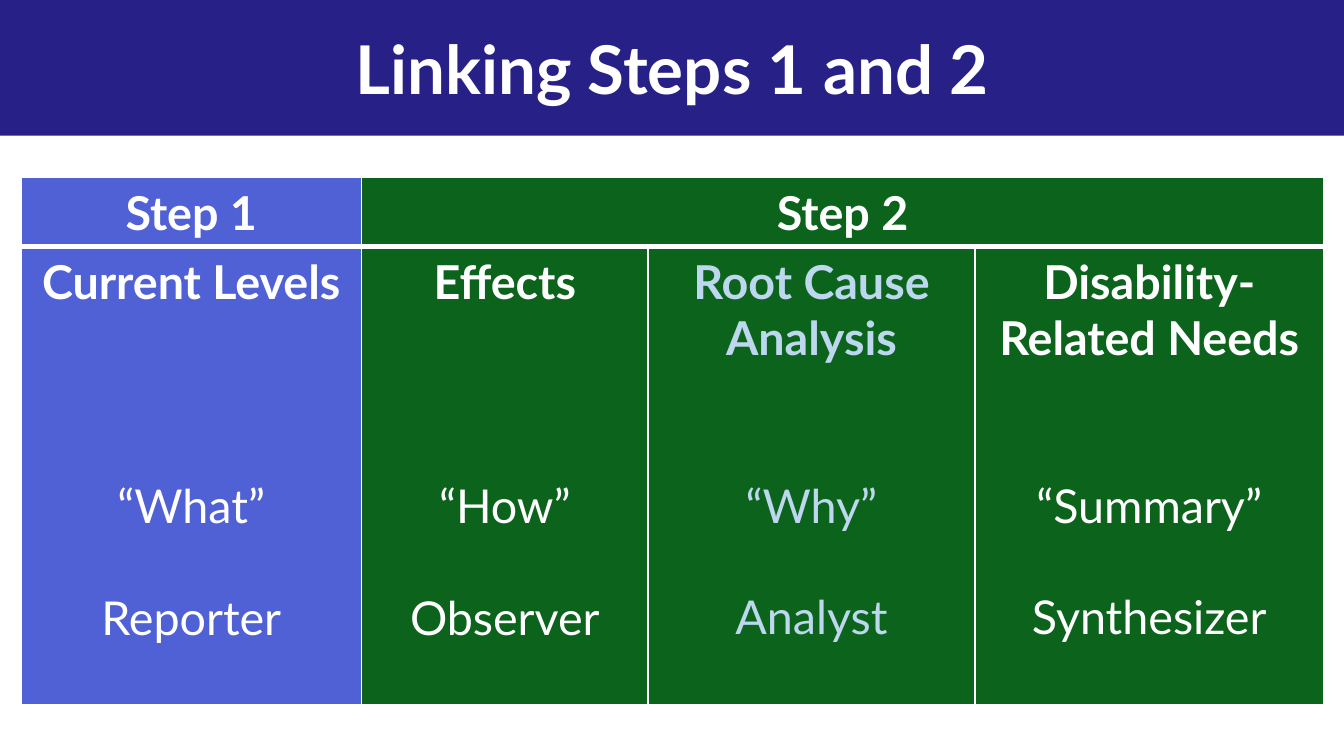
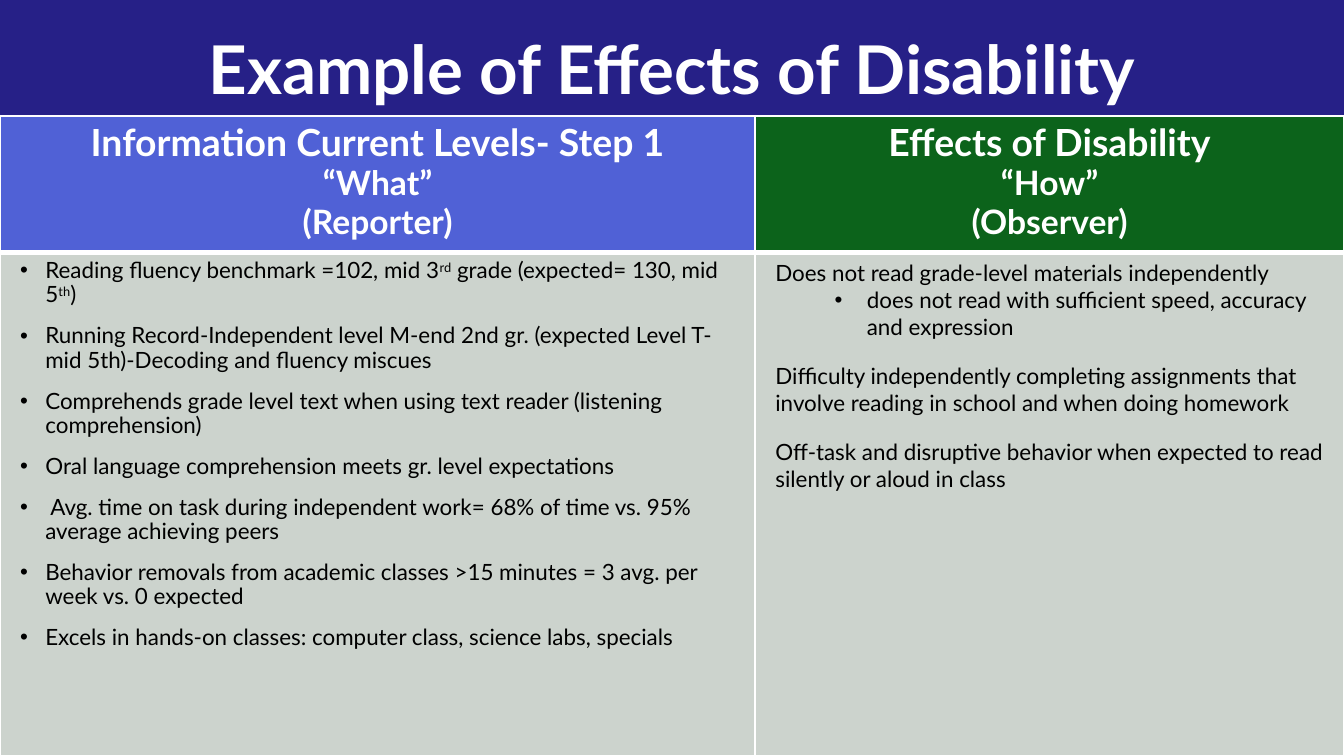
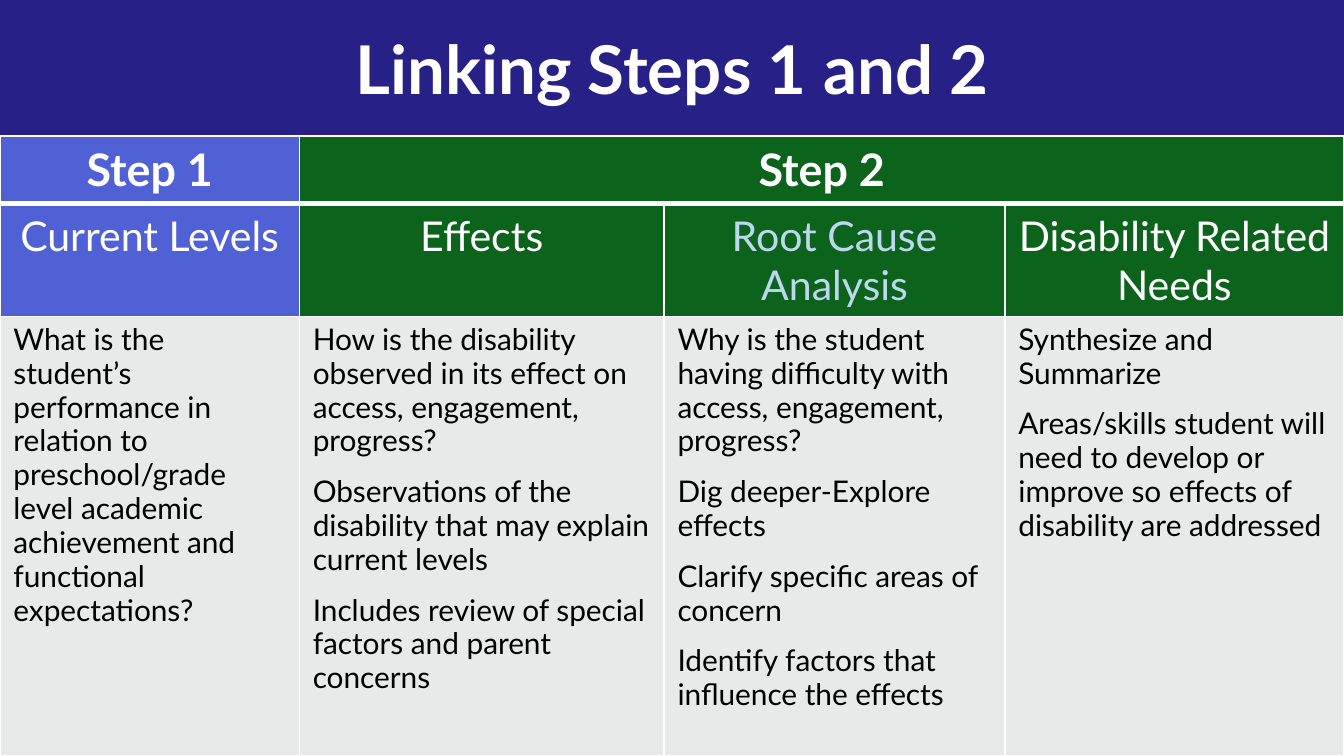
from lxml.etree import SubElement
from pptx import Presentation
from pptx.dml.color import RGBColor
from pptx.enum.shapes import MSO_SHAPE
from pptx.enum.text import MSO_ANCHOR, PP_ALIGN
from pptx.oxml.ns import qn
from pptx.util import Pt

NAVY = RGBColor(0x26, 0x20, 0x87)
BLUE = RGBColor(0x50, 0x61, 0xD6)
GREEN = RGBColor(0x0C, 0x63, 0x1B)
PALE_BLUE = RGBColor(0xBD, 0xD7, 0xEE)
GREY = RGBColor(0xCC, 0xD3, 0xCD)
LIGHT_GREY = RGBColor(0xE7, 0xEA, 0xE8)
WHITE = RGBColor(0xFF, 0xFF, 0xFF)
BLACK = RGBColor(0, 0, 0)

FONT = "Lato"
WIDTH, HEIGHT, BAND_HEIGHT = 720, 405, 72.7
STEP_FILLS = [BLUE, GREEN, GREEN, GREEN]
STEP_COLORS = [WHITE, WHITE, PALE_BLUE, WHITE]

ROLES = [
    ("Current Levels", "“What”", "Reporter", 90),
    ("Effects", "“How”", "Observer", 90),
    ("Root Cause Analysis", "“Why”", "Analyst", 60),
    ("Disability-Related Needs", "“Summary”", "Synthesizer", 60),
]

EXAMPLE_HEADS = [
    ("Information Current Levels- Step 1", "“What”", "(Reporter)"),
    ("Effects of Disability", "“How”", "(Observer)"),
]

CURRENT_LEVELS = [
    "Reading fluency benchmark =102, mid 3^rd^ grade (expected= 130, mid 5^th^)",
    "Running Record-Independent level M-end 2nd gr. (expected Level T- mid 5th)"
    "-Decoding and fluency miscues",
    "Comprehends grade level text when using text reader (listening comprehension)",
    "Oral language comprehension meets gr. level expectations",
    " Avg. time on task during independent work= 68% of time vs. 95% average achieving peers",
    "Behavior removals from academic classes >15 minutes = 3 avg. per week vs. 0 expected",
    "Excels in hands-on classes: computer class, science labs, specials",
]

EFFECTS = [
    "Does not read grade-level materials independently",
    "does not read with sufficient speed, accuracy and expression",
    "Difficulty independently completing assignments that involve reading in school "
    "and when doing homework",
    "Off-task and disruptive behavior when expected to read silently or aloud in class",
]

QUESTIONS = [
    ("Current Levels", [
        "What is the student’s performance in relation to preschool/grade level academic "
        "achievement and functional expectations?",
    ]),
    ("Effects", [
        "How is the disability observed in its effect on access, engagement, progress?",
        "Observations of the disability that may explain current levels",
        "Includes review of special factors and parent concerns",
    ]),
    ("Root Cause Analysis", [
        "Why is the student having difficulty with access, engagement, progress?",
        "Dig deeper-Explore effects",
        "Clarify specific areas of concern",
        "Identify factors that influence the effects",
    ]),
    ("Disability Related Needs", [
        "Synthesize and Summarize",
        "Areas/skills student will need to develop or improve so effects of disability "
        "are addressed",
    ]),
]


def style_run(r, size, color, bold):
    r.font.name = FONT
    r.font.size = Pt(size)
    r.font.bold = bold
    r.font.color.rgb = color


def add_band(layout, s):
    band = s.shapes.add_shape(MSO_SHAPE.RECTANGLE, Pt(0), Pt(0), Pt(WIDTH), Pt(BAND_HEIGHT))
    band.shadow.inherit = False
    band.fill.solid()
    band.fill.fore_color.rgb = NAVY
    band.line.fill.background()
    layout.shapes.element.insert(2, band.element)


def add_titled_slide(prs, title):
    layout = prs.slide_layouts[5]
    s = prs.slides.add_slide(layout)
    if len(prs.slides) == 1:
        add_band(layout, s)
    sp = s.shapes.title
    sp.left, sp.top, sp.width, sp.height = Pt(0), Pt(0), Pt(WIDTH), Pt(BAND_HEIGHT)
    tf = sp.text_frame
    tf.text = title
    tf.word_wrap = True
    tf.vertical_anchor = MSO_ANCHOR.MIDDLE
    p = tf.paragraphs[0]
    p.alignment = PP_ALIGN.CENTER
    style_run(p.runs[0], 36, WHITE, True)
    return s


def set_border(cell, side, weight):
    ln = SubElement(cell._tc.get_or_add_tcPr(), qn(f"a:ln{side}"), w=str(Pt(weight)))
    fill = SubElement(ln, qn("a:solidFill"))
    SubElement(fill, qn("a:srgbClr"), val=str(WHITE))


def add_grid(s, left, top, widths, heights):
    shape = s.shapes.add_table(len(heights), len(widths), Pt(left), Pt(top),
                               Pt(sum(widths)), Pt(sum(heights)))
    table = shape.table
    for column, width in zip(table.columns, widths):
        column.width = Pt(width)
    for i, (row, height) in enumerate(zip(table.rows, heights)):
        row.height = Pt(height)
        for cell in row.cells:
            set_border(cell, "L", 1)
            set_border(cell, "R", 1)
            set_border(cell, "T", 3 if i == 1 else 1)
            set_border(cell, "B", 3 if i == 0 else 1)
    return table


def fill_cell(cell, fill, lines, inset=7.2):
    cell.fill.solid()
    cell.fill.fore_color.rgb = fill
    cell.margin_left = cell.margin_right = Pt(inset)
    cell.text_frame.text = "\n".join(lines)
    return cell.text_frame.paragraphs


def style_paragraph(p, size, color=WHITE, bold=False, align=PP_ALIGN.CENTER,
                    before=0, spacing=1.0):
    p.alignment = align
    p.space_before = Pt(before)
    p.line_spacing = spacing
    for r in p.runs:
        style_run(r, size, color, bold)


def style_body(paragraphs, size, before, spacing):
    for i, p in enumerate(paragraphs):
        style_paragraph(p, size, BLACK, False, PP_ALIGN.LEFT, before if i else 0, spacing)


def add_bullet(p, margin, hanging):
    pPr = p._p.get_or_add_pPr()
    pPr.set("marL", str(Pt(margin)))
    pPr.set("indent", str(-Pt(hanging)))
    SubElement(pPr, qn("a:buFont"), typeface="Arial")
    SubElement(pPr, qn("a:buChar"), char="•")


def split_superscripts(p):
    parts = p.text.split("^")
    p.text = parts[0]
    for i, part in enumerate(parts[1:], 1):
        r = p.add_run()
        r.text = part
        if i % 2:
            r.font._element.set("baseline", "30000")


def add_step_heads(table, size):
    table.cell(0, 1).merge(table.cell(0, 3))
    for col, fill in enumerate([BLUE, GREEN]):
        p = fill_cell(table.cell(0, col), fill, [f"Step {col + 1}"])[0]
        style_paragraph(p, size, bold=True)


def add_roles_slide(prs):
    s = add_titled_slide(prs, "Linking Steps 1 and 2")
    table = add_grid(s, 11.2, 95.2, [182.5, 153.5, 175, 187], [37, 245.4])
    add_step_heads(table, 25)
    for col, (head, question, role, gap) in enumerate(ROLES):
        color = STEP_COLORS[col]
        paragraphs = fill_cell(table.cell(1, col), STEP_FILLS[col], [head, question, role])
        for p, before in zip(paragraphs, [0, gap, 30]):
            style_paragraph(p, 25, color, bold=before == 0, before=before)


def add_example_slide(prs):
    s = add_titled_slide(prs, "Example of Effects of Disability")
    table = add_grid(s, 0, 62, [404.6, 315.4], [73.4, 269.6])
    for col, lines in enumerate(EXAMPLE_HEADS):
        paragraphs = fill_cell(table.cell(0, col), STEP_FILLS[col], lines, 10.8)
        for p, size in zip(paragraphs, [20, 18, 18]):
            style_paragraph(p, size, bold=True, spacing=0.95)

    levels = fill_cell(table.cell(1, 0), GREY, CURRENT_LEVELS, 10.8)
    for p in levels:
        add_bullet(p, 13.5, 13.5)
        split_superscripts(p)
    style_body(levels, 12, 9, 0.9)

    effects = fill_cell(table.cell(1, 1), GREY, EFFECTS, 10.8)
    add_bullet(effects[1], 49, 17.3)
    style_body(effects, 12, 12, 1.0)
    effects[1].level = 1
    effects[1].space_before = Pt(0)


def add_questions_slide(prs):
    s = add_titled_slide(prs, "Linking Steps 1 and 2")
    table = add_grid(s, 0, BAND_HEIGHT, [160.4, 195.4, 182.6, 181.6], [36.5, 60.4, 235.4])
    add_step_heads(table, 24)
    for col, (head, questions) in enumerate(QUESTIONS):
        p = fill_cell(table.cell(1, col), STEP_FILLS[col], [head])[0]
        style_paragraph(p, 22, STEP_COLORS[col])
        style_body(fill_cell(table.cell(2, col), LIGHT_GREY, questions), 16, 9, 0.95)


def main():
    prs = Presentation()
    prs.slide_width, prs.slide_height = Pt(WIDTH), Pt(HEIGHT)
    add_roles_slide(prs)
    add_example_slide(prs)
    add_questions_slide(prs)
    prs.save("out.pptx")


if __name__ == "__main__":
    main()
